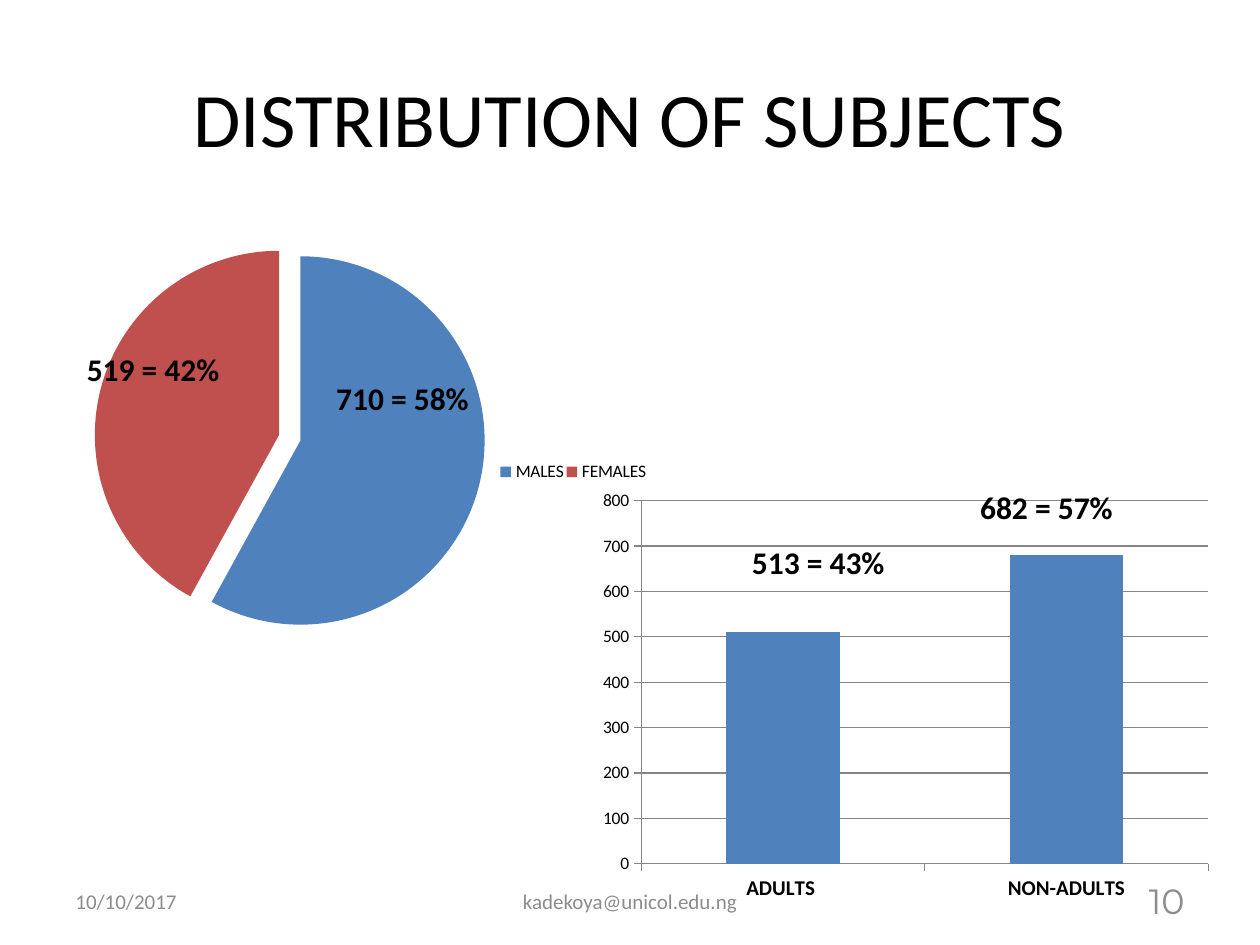
import lxml.etree
import pptx
import pptx.chart.data
import pptx.dml.color
import pptx.enum.chart
import pptx.enum.text
import pptx.oxml.ns
import pptx.util

Pt = pptx.util.Pt
qn = pptx.oxml.ns.qn
color = pptx.dml.color.RGBColor.from_string
ALIGN = pptx.enum.text.PP_ALIGN
ANCHOR = pptx.enum.text.MSO_ANCHOR
CHART = pptx.enum.chart.XL_CHART_TYPE


def set_layout(parent, index, values):
    for old in parent.findall(qn("c:layout")):
        parent.remove(old)
    layout = lxml.etree.Element(qn("c:layout"))
    manual = lxml.etree.SubElement(layout, qn("c:manualLayout"))
    settings = [("xMode", "edge"), ("yMode", "edge"), *zip("xywh", values)]
    if parent.tag == qn("c:plotArea"):
        settings.insert(0, ("layoutTarget", "inner"))
    for name, value in settings:
        lxml.etree.SubElement(manual, qn("c:" + name)).set("val", str(value))
    parent.insert(index, layout)


def add_chart(kind, left, top, categories, values, plot_layout):
    data = pptx.chart.data.CategoryChartData()
    data.categories = categories
    data.add_series("Series 1", values)
    chart = slide.shapes.add_chart(kind, Pt(left), Pt(top), Pt(360), Pt(244), data).chart
    chart.has_title = False
    chart.font.name = "Calibri"
    chart.font.size = Pt(10)
    chart.font.color.rgb = color("000000")
    chart.plots[0].vary_by_categories = kind == CHART.PIE
    set_layout(chart._chartSpace.chart.plotArea, 0, plot_layout)
    return chart


presentation = pptx.Presentation()
presentation.slide_width = Pt(720)
presentation.slide_height = Pt(540)
slide = presentation.slides.add_slide(presentation.slide_layouts[6])

pie = add_chart(CHART.PIE, 14.4, 128.2, ["MALES", "FEMALES"], [58, 42],
                [0.11, 0.04, 0.62, 0.92])
pie.has_legend = True
pie.legend.position = pptx.enum.chart.XL_LEGEND_POSITION.RIGHT
pie.legend.include_in_layout = False
set_layout(pie.legend._element, 1, [0.75, 0.54, 0.24, 0.08])
subjects = pie.plots[0].series[0]
explosion = lxml.etree.Element(qn("c:explosion"))
explosion.set("val", "6")
subjects._element.find(qn("c:tx")).addnext(explosion)
for index, fill in enumerate(["4F81BD", "C0504D"]):
    point = subjects.points[index]
    point.format.fill.solid()
    point.format.fill.fore_color.rgb = color(fill)

columns = add_chart(CHART.COLUMN_CLUSTERED, 337.7, 276.4, ["ADULTS ", "NON-ADULTS"],
                    [510, 680], [0.08, 0.04, 0.9, 0.85])
columns.has_legend = False
columns.plots[0].gap_width = 150
bars = columns.plots[0].series[0]
bars.format.fill.solid()
bars.format.fill.fore_color.rgb = color("4F81BD")
value_axis = columns.value_axis
value_axis.minimum_scale = 0
value_axis.maximum_scale = 800
value_axis.major_unit = 100
value_axis.major_gridlines.format.line.color.rgb = color("868686")
for axis in (columns.category_axis, value_axis):
    axis.major_tick_mark = pptx.enum.chart.XL_TICK_MARK.OUTSIDE
    axis.format.line.color.rgb = color("868686")
columns.category_axis.tick_labels.font.size = Pt(12)
columns.category_axis.tick_labels.font.bold = True

label = (18, "Calibri", "000000", True, ALIGN.LEFT, ANCHOR.TOP)
texts = [
    ("DISTRIBUTION OF SUBJECTS", 36, 21.6, 648, 90,
     44, "Calibri", "000000", False, ALIGN.CENTER, ANCHOR.MIDDLE),
    ("710 = 58%", 185, 213.1, 102.2, 28.8, *label),
    ("519 = 42%", 42.5, 196.6, 102.2, 28.8, *label),
    ("513 = 43%", 422.6, 306.7, 113, 28.8, *label),
    ("682 = 57%", 553, 275.5, 113, 28.8, *label),
    ("10/10/2017", 36, 500.4, 168, 28.8,
     12, "Calibri", "8C8C8C", False, ALIGN.LEFT, ANCHOR.MIDDLE),
    ("kadekoya@unicol.edu.ng", 246, 500.4, 228, 28.8,
     12, "Calibri", "8C8C8C", False, ALIGN.CENTER, ANCHOR.MIDDLE),
    ("10", 516, 500.4, 168, 28.8,
     20, "Montserrat", "8C8C8C", False, ALIGN.RIGHT, ANCHOR.MIDDLE),
]
for text, left, top, width, height, size, face, ink, bold, alignment, anchor in texts:
    shape = slide.shapes.add_textbox(Pt(left), Pt(top), Pt(width), Pt(height))
    frame = shape.text_frame
    frame.word_wrap = True
    frame.vertical_anchor = anchor
    paragraph = frame.paragraphs[0]
    paragraph.text = text
    paragraph.alignment = alignment
    paragraph.font.size = Pt(size)
    paragraph.font.name = face
    paragraph.font.bold = bold
    paragraph.font.color.rgb = color(ink)

presentation.save("out.pptx")
